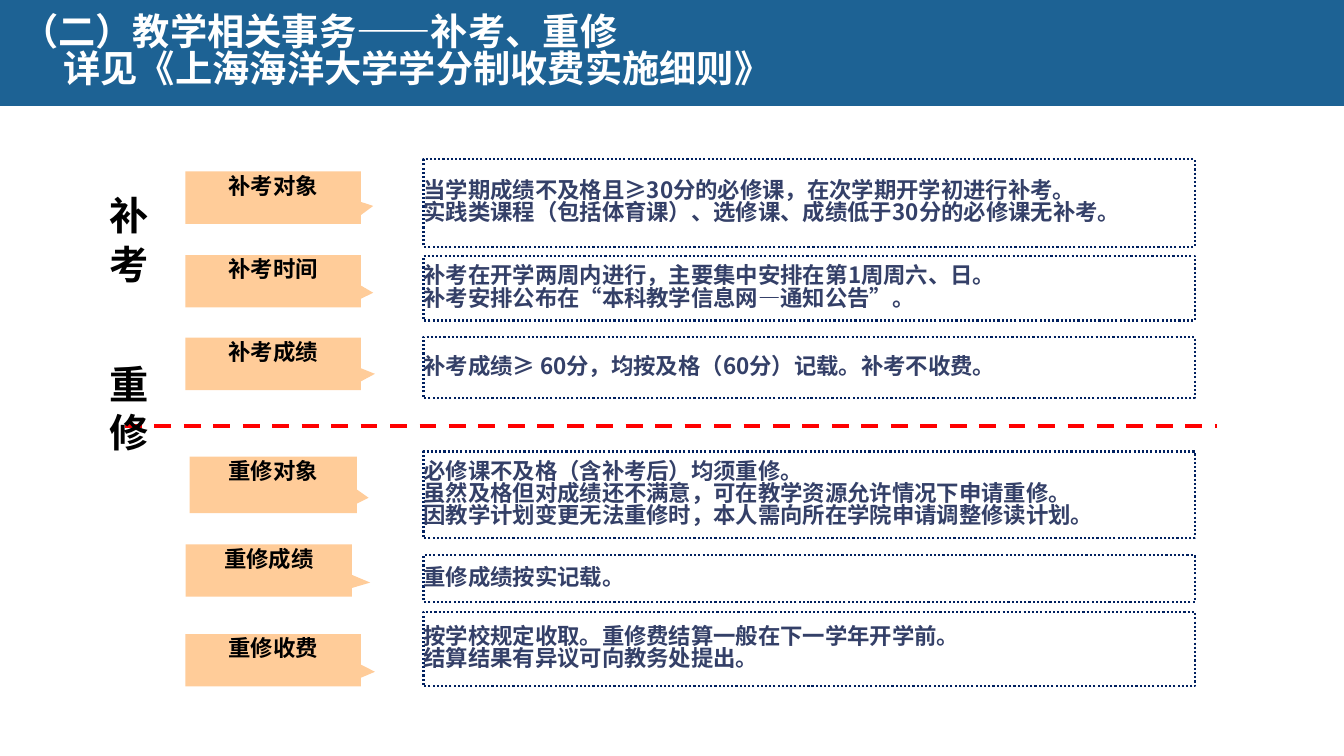
from lxml import etree
from pptx import Presentation
from pptx.dml.color import RGBColor
from pptx.enum.dml import MSO_LINE
from pptx.enum.shapes import MSO_CONNECTOR, MSO_SHAPE
from pptx.enum.text import MSO_ANCHOR, PP_ALIGN
from pptx.oxml.ns import qn
from pptx.util import Inches, Pt

RECT, CALLOUT = MSO_SHAPE.RECTANGLE, MSO_SHAPE.RECTANGULAR_CALLOUT
TOP, MIDDLE = MSO_ANCHOR.TOP, MSO_ANCHOR.MIDDLE
LEFT, CENTER = PP_ALIGN.LEFT, PP_ALIGN.CENTER
FONT = "Noto Sans CJK SC"
LINE_SPACING = 0.83

# Content
TITLE = [("（二）教学相关事务——补考、重修", 0.16),
         ("详见《上海海洋大学学分制收费实施细则》", 0.58)]
SECTIONS = [("补 考", 1.85, 1.6), ("重 修", 3.52, 3.26)]  # text, top, height
# label, (left, top, width, height), pointer tip, rule top, rule height, rule lines
TOPICS = [
    ("补考对象", (1.84, 1.7, 1.74, 0.52), (0.57, 0.16), 1.58, 0.87,
     ["当学期成绩不及格且≥30分的必修课，在次学期开学初进行补考。",
      "实践类课程（包括体育课）、选修课、成绩低于30分的必修课无补考。"]),
    ("补考时间", (1.84, 2.53, 1.74, 0.52), (0.57, 0.22), 2.54, 0.64,
     ["补考在开学两周内进行，主要集中安排在第1周周六、日。",
      "补考安排公布在“本科教学信息网—通知公告”。"]),
    ("补考成绩", (1.84, 3.35, 1.74, 0.52), (0.58, 0.19), 3.34, 0.61,
     ["补考成绩≥ 60分，均按及格（60分）记载。补考不收费。"]),
    ("重修对象", (1.88, 4.53, 1.66, 0.56), (0.57, 0.23), 4.48, 0.86,
     ["必修课不及格（含补考后）均须重修。",
      "虽然及格但对成绩还不满意，可在教学资源允许情况下申请重修。",
      "因教学计划变更无法重修时，本人需向所在学院申请调整修读计划。"]),
    ("重修成绩", (1.84, 5.4, 1.65, 0.52), (0.61, 0.23), 5.51, 0.46,
     ["重修成绩按实记载。"]),
    ("重修收费", (1.84, 6.29, 1.74, 0.52), (0.58, 0.22), 6.07, 0.74,
     ["按学校规定收取。重修费结算一般在下一学年开学前。",
      "结算结果有异议可向教务处提出。"]),
]
RULE_LEFT, RULE_WIDTH = 4.2, 7.65
DIVIDER = (1.24, 12.07, 4.23)  # from x, to x, y


def rgb(value):
    return RGBColor.from_string(value)


def add_block(kind, box, fill):
    block = slide.shapes.add_shape(kind, *map(Inches, box))
    block.shadow.inherit = False
    block.fill.solid()
    block.fill.fore_color.rgb = rgb(fill)
    block.line.fill.background()
    return block


def write(shape, lines, size, color, align=LEFT, anchor=TOP, insets=(0.1, 0.05)):
    """Write (text, left indent) pairs, one paragraph each."""
    frame = shape.text_frame
    frame.word_wrap = True
    frame.vertical_anchor = anchor
    frame.margin_left = frame.margin_right = Inches(insets[0])
    frame.margin_top = frame.margin_bottom = Inches(insets[1])
    for index, (text, indent) in enumerate(lines):
        paragraph = frame.add_paragraph() if index else frame.paragraphs[0]
        paragraph.alignment = align
        paragraph.line_spacing = LINE_SPACING
        if indent:
            paragraph._p.get_or_add_pPr().set("marL", str(Inches(indent)))
        run = paragraph.add_run()
        run.text = text
        run.font.size = Pt(size)
        run.font.bold = True
        run.font.name = FONT
        run.font.color.rgb = rgb(color)
        east_asian = etree.SubElement(run._r.get_or_add_rPr(), qn("a:ea"))
        east_asian.set("typeface", FONT)


prs = Presentation()
prs.slide_width, prs.slide_height = Inches(13.33), Inches(7.5)
slide = prs.slides.add_slide(prs.slide_layouts[6])

# Title band
band = add_block(RECT, (0, 0, 13.33, 1.05), "1D6294")
write(band, TITLE, 26.6, "FFFFFF", anchor=MIDDLE, insets=(0.05, 0.05))

# Topic callouts with their rules
for label, label_box, tip, top, height, rules in TOPICS:
    callout = add_block(CALLOUT, label_box, "FFCC99")
    callout.adjustments[0], callout.adjustments[1] = tip
    write(callout, [(label, 0)], 16, "000000", align=CENTER)

    rule_box = add_block(RECT, (RULE_LEFT, top, RULE_WIDTH, height), "FFFFFF")
    rule_box.line.color.rgb = rgb("002060")
    rule_box.line.width = Pt(1.5)
    rule_box.line.dash_style = MSO_LINE.ROUND_DOT
    write(rule_box, [(rule, 0) for rule in rules], 16, "344068",
          anchor=MIDDLE, insets=(0, 0.05))

# Divider between the two sections
start, end, y = DIVIDER
divider = slide.shapes.add_connector(
    MSO_CONNECTOR.STRAIGHT, Inches(start), Inches(y), Inches(end), Inches(y))
divider.line.color.rgb = rgb("FF0000")
divider.line.width = Pt(3)
divider.line.dash_style = MSO_LINE.DASH
etree.SubElement(divider._element.spPr, qn("a:effectLst"))

# Vertical section names
for name, top, height in SECTIONS:
    section = slide.shapes.add_textbox(
        Inches(0.57), Inches(top), Inches(0.9), Inches(height))
    write(section, [(name, 0)], 28, "000000")
    section.text_frame._txBody.bodyPr.set("vert", "eaVert")

prs.save("out.pptx")
